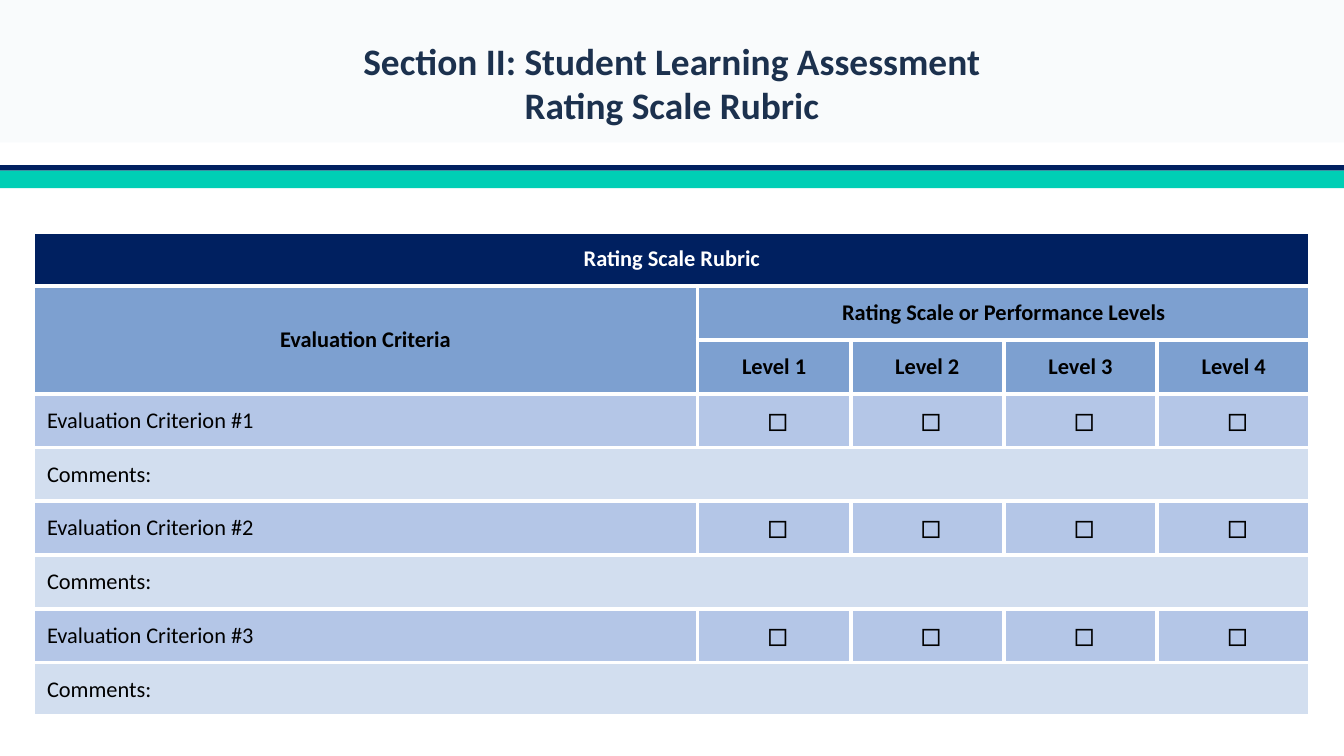
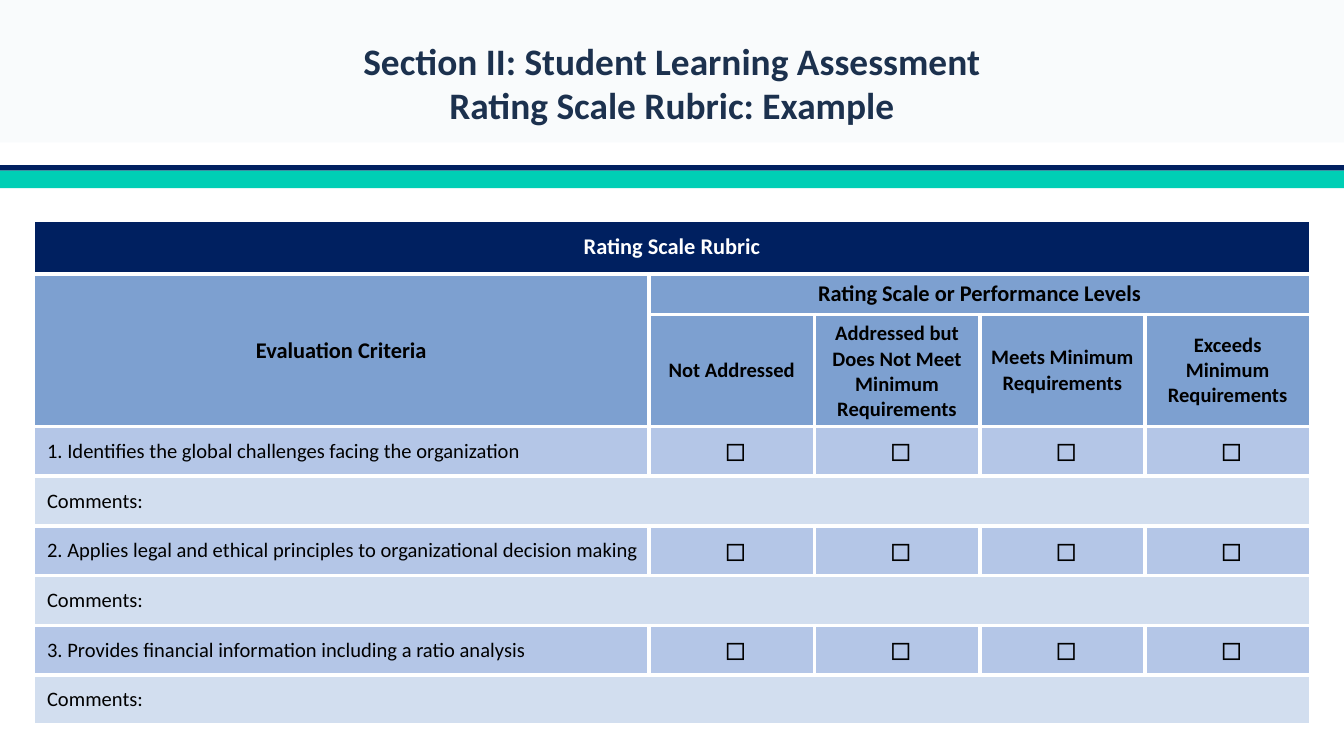
"""Builds two slides that present a rating scale rubric, blank and filled in."""
from lxml import etree
from pptx import Presentation
from pptx.dml.color import RGBColor
from pptx.enum.shapes import MSO_SHAPE
from pptx.enum.text import MSO_ANCHOR, PP_ALIGN
from pptx.oxml.ns import qn
from pptx.util import Inches, Pt

RECT = MSO_SHAPE.RECTANGLE
MIDDLE = MSO_ANCHOR.MIDDLE
LEFT, CENTER = PP_ALIGN.LEFT, PP_ALIGN.CENTER

FONT = "Calibri"
NAVY, TEAL, MIST, INK = "002060", "00CFB5", "E8F0F4", "1C314E"
STEEL, PERIWINKLE, PALE = "7DA0D0", "B4C6E7", "D2DEEF"
WHITE, BLACK = "FFFFFF", "000000"

WIDTH = 10
HEIGHT = WIDTH * 9 / 16
TABLE_LEFT, TABLE_WIDTH = 0.25, 9.5
BORDER = 2.25
CHECKBOX = " ◻"
SECTION = "Section II: Student Learning Assessment"

BANDS = [
    (1.23, 0.23, NAVY, None),
    (1.27, 4.36, WHITE, None),
    (1.27, 0.13, TEAL, None),
    (0, 1.06, MIST, 25),
]

RUBRICS = [
    {
        "title": "Rating Scale Rubric",
        "top": 1.73,
        "criteria_width": 4.94,
        "head_rows": [0.4, 0.4, 0.4],
        "body_row": 0.4,
        "size": 12,
        "level_pad": 0,
        "levels": ["Level 1", "Level 2", "Level 3", "Level 4"],
        "criteria": [
            "Evaluation Criterion #1",
            "Evaluation Criterion #2",
            "Evaluation Criterion #3",
        ],
    },
    {
        "title": "Rating Scale Rubric: Example",
        "top": 1.64,
        "criteria_width": 4.58,
        "head_rows": [0.4, 0.3, 0.83],
        "body_row": 0.37,
        "size": 11,
        "level_pad": 0.05,
        "levels": [
            "Not Addressed",
            "Addressed but Does Not Meet Minimum Requirements",
            "Meets Minimum Requirements",
            "Exceeds Minimum Requirements",
        ],
        "criteria": [
            "1. Identifies the global challenges facing the organization",
            "2. Applies legal and ethical principles to organizational decision making",
            "3. Provides financial information including a ratio analysis",
        ],
    },
]


def rgb(color):
    return RGBColor.from_string(color)


def style(p, size, color, bold, align):
    p.alignment = align
    p.font.name = FONT
    p.font.size = Pt(size)
    p.font.bold = bold
    p.font.color.rgb = rgb(color)


def add_bands(s):
    for top, height, color, opacity in BANDS:
        sp = s.shapes.add_shape(RECT, 0, Inches(top), Inches(WIDTH), Inches(height))
        sp.shadow.inherit = False
        sp.line.fill.background()
        sp.fill.solid()
        sp.fill.fore_color.rgb = rgb(color)
        if opacity:
            clr = sp.fill._xPr.find(".//" + qn("a:srgbClr"))
            etree.SubElement(clr, qn("a:alpha"), val=str(opacity * 1000))


def add_title(s, title):
    sp = s.shapes.add_textbox(0, 0, Inches(WIDTH), Inches(1.23))
    tf = sp.text_frame
    tf.word_wrap = True
    tf.vertical_anchor = MIDDLE
    tf.margin_left = tf.margin_right = tf.margin_top = tf.margin_bottom = 0
    tf.text = f"{SECTION}\n{title}"
    for p in tf.paragraphs:
        style(p, 20, INK, True, CENTER)


def add_borders(cell):
    tc_pr = cell._tc.get_or_add_tcPr()
    for side in ("lnL", "lnR", "lnT", "lnB"):
        ln = etree.SubElement(tc_pr, qn(f"a:{side}"), w=str(Pt(BORDER)))
        fill = etree.SubElement(ln, qn("a:solidFill"))
        etree.SubElement(fill, qn("a:srgbClr"), val=WHITE)


def set_cell(cell, text, size=12, color=BLACK, bold=False, align=CENTER, pad=0):
    cell.text = text
    cell.vertical_anchor = MIDDLE
    cell.margin_left = Inches(0.1 if align == LEFT else 0.08)
    cell.margin_right = Inches(0.08)
    cell.margin_top = cell.margin_bottom = Inches(pad)
    style(cell.text_frame.paragraphs[0], size, color, bold, align)


def add_rubric(s, rubric):
    levels, criteria, size = rubric["levels"], rubric["criteria"], rubric["size"]
    heights = rubric["head_rows"] + [rubric["body_row"]] * (2 * len(criteria))
    fills = [NAVY, STEEL, STEEL] + [PERIWINKLE, PALE] * len(criteria)
    last = len(levels)
    level_width = (TABLE_WIDTH - rubric["criteria_width"]) / last

    frame = s.shapes.add_table(
        len(heights), last + 1, Inches(TABLE_LEFT), Inches(rubric["top"]),
        Inches(TABLE_WIDTH), Inches(sum(heights)))
    table = frame.table
    for col, column in enumerate(table.columns):
        column.width = Inches(level_width if col else rubric["criteria_width"])
    for row, height, color in zip(table.rows, heights, fills):
        row.height = Inches(height)
        for cell in row.cells:
            add_borders(cell)
            cell.fill.solid()
            cell.fill.fore_color.rgb = rgb(color)
            set_cell(cell, "", size)

    table.cell(0, 0).merge(table.cell(0, last))
    table.cell(1, 0).merge(table.cell(2, 0))
    table.cell(1, 1).merge(table.cell(1, last))
    set_cell(table.cell(0, 0), "Rating Scale Rubric", color=WHITE, bold=True)
    set_cell(table.cell(1, 0), "Evaluation Criteria", bold=True)
    set_cell(table.cell(1, 1), "Rating Scale or Performance Levels", bold=True)
    for col, level in enumerate(levels, 1):
        set_cell(table.cell(2, col), level, size, bold=True, pad=rubric["level_pad"])

    for i, criterion in enumerate(criteria):
        row = 3 + 2 * i
        set_cell(table.cell(row, 0), criterion, size, align=LEFT)
        for col in range(1, last + 1):
            set_cell(table.cell(row, col), CHECKBOX, 18)
        table.cell(row + 1, 0).merge(table.cell(row + 1, last))
        set_cell(table.cell(row + 1, 0), "Comments:", size, align=LEFT)


def main():
    prs = Presentation()
    prs.slide_width, prs.slide_height = Inches(WIDTH), Inches(HEIGHT)
    for rubric in RUBRICS:
        s = prs.slides.add_slide(prs.slide_layouts[6])
        add_bands(s)
        add_rubric(s, rubric)
        add_title(s, rubric["title"])
    prs.save("out.pptx")


if __name__ == "__main__":
    main()
